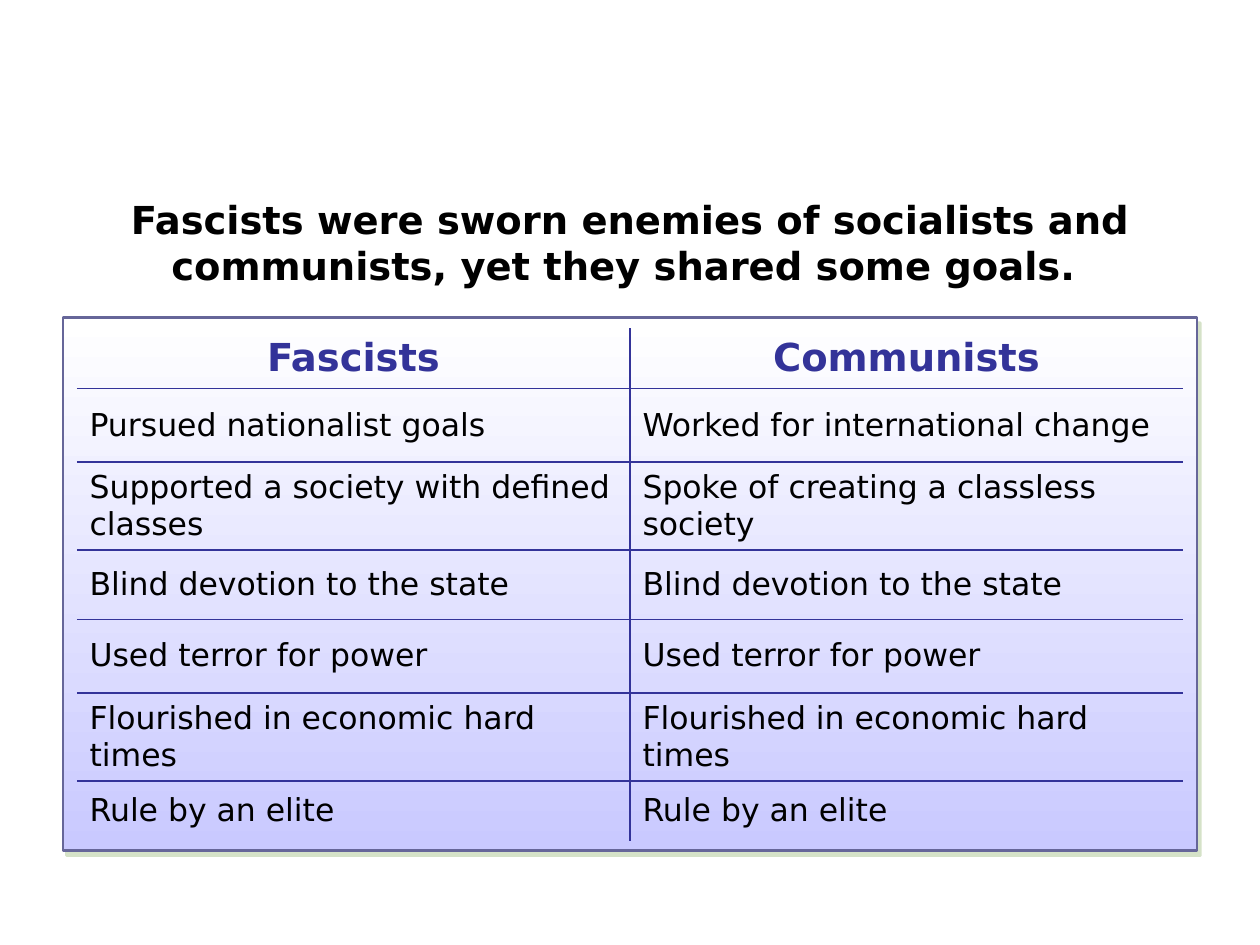
"""Build a slide that compares fascists and communists in a two-column table."""
import pptx
import pptx.dml.color
import pptx.enum.shapes
import pptx.enum.text
import pptx.oxml
import pptx.oxml.ns
import pptx.util

Pt = pptx.util.Pt
ALIGN = pptx.enum.text.PP_ALIGN
ANCHOR = pptx.enum.text.MSO_ANCHOR

FONT = "DejaVu Sans"
INDIGO = "333399"
TITLE = "Fascists were sworn enemies of socialists and communists, yet they shared some goals. "
ROWS = [
    ("Fascists", "Communists"),
    ("Pursued nationalist goals", "Worked for international change"),
    ("Supported a society with defined classes", "Spoke of creating a classless society"),
    ("Blind devotion to the state", "Blind devotion to the state"),
    ("Used terror for power", "Used terror for power"),
    ("Flourished in economic hard times", "Flourished in economic hard times"),
    ("Rule by an elite", "Rule by an elite"),
]
ROW_HEIGHTS = [34.5, 42, 46, 39.5, 42, 45.5, 34]
COLUMN_WIDTH = 316


def color(code):
    return pptx.dml.color.RGBColor.from_string(code)


def write(frame, text, size=18, bold=False, fill="000000", align=ALIGN.LEFT):
    frame.word_wrap = True
    para = frame.paragraphs[0]
    para.alignment = align
    span = para.add_run()
    span.text = text
    span.font.name = FONT
    span.font.size = Pt(size)
    span.font.bold = bold
    span.font.color.rgb = color(fill)


def add_xml(parent, content):
    namespace = pptx.oxml.ns.nsdecls("a")
    parent.append(pptx.oxml.parse_xml(content.replace(">", f" {namespace}>", 1)))


def set_borders(cell, visible):
    properties = cell._tc.get_or_add_tcPr()
    for side in "LRTB":
        paint = f'<a:solidFill><a:srgbClr val="{INDIGO}"/></a:solidFill>' if side in visible else "<a:noFill/>"
        add_xml(properties, f'<a:ln{side} w="{Pt(1)}">{paint}</a:ln{side}>')


def add_panel(page):
    panel = page.shapes.add_shape(
        pptx.enum.shapes.MSO_SHAPE.RECTANGLE, Pt(36), Pt(181.5), Pt(648), Pt(304.5))
    panel.fill.gradient()
    panel.fill.gradient_angle = 270
    for stop, code in zip(panel.fill.gradient_stops, ("FFFFFF", "C9C9FF")):
        stop.color.rgb = color(code)
    panel.line.color.rgb = color("666699")
    panel.line.width = Pt(1.5)
    add_xml(panel._element.spPr,
            f'<a:effectLst><a:outerShdw blurRad="0" dist="{Pt(3.6)}" dir="{56 * 60000}" rotWithShape="0">'
            '<a:srgbClr val="ADC793"><a:alpha val="50000"/></a:srgbClr></a:outerShdw></a:effectLst>')


def add_comparison(page):
    last_row, last_column = len(ROWS) - 1, len(ROWS[0]) - 1
    table = page.shapes.add_table(
        len(ROWS), len(ROWS[0]), Pt(44), Pt(187.5),
        Pt(COLUMN_WIDTH * len(ROWS[0])), Pt(sum(ROW_HEIGHTS))).table
    table.first_row = table.horz_banding = False
    for column in table.columns:
        column.width = Pt(COLUMN_WIDTH)
    for row, (texts, height) in enumerate(zip(ROWS, ROW_HEIGHTS)):
        table.rows[row].height = Pt(height)
        style = {} if row else dict(size=22, bold=True, fill=INDIGO, align=ALIGN.CENTER)
        for column, text in enumerate(texts):
            cell = table.cell(row, column)
            inner = {"L": column > 0, "R": column < last_column, "T": row > 0, "B": row < last_row}
            set_borders(cell, [side for side, shown in inner.items() if shown])
            cell.fill.background()
            cell.vertical_anchor = ANCHOR.MIDDLE
            write(cell.text_frame, text, **style)


def add_title(page):
    title = page.shapes.title
    title.left, title.top, title.width, title.height = Pt(30), Pt(108.5), Pt(660), Pt(60)
    frame = title.text_frame
    frame.auto_size = pptx.enum.text.MSO_AUTO_SIZE.SHAPE_TO_FIT_TEXT
    frame.vertical_anchor = ANCHOR.TOP
    write(frame, TITLE, size=22, bold=True, align=ALIGN.CENTER)


def main():
    deck = pptx.Presentation()
    deck.slide_width, deck.slide_height = Pt(720), Pt(540)
    page = deck.slides.add_slide(deck.slide_layouts.get_by_name("Title Only"))
    add_panel(page)
    add_comparison(page)
    add_title(page)
    deck.save("out.pptx")


if __name__ == "__main__":
    main()
